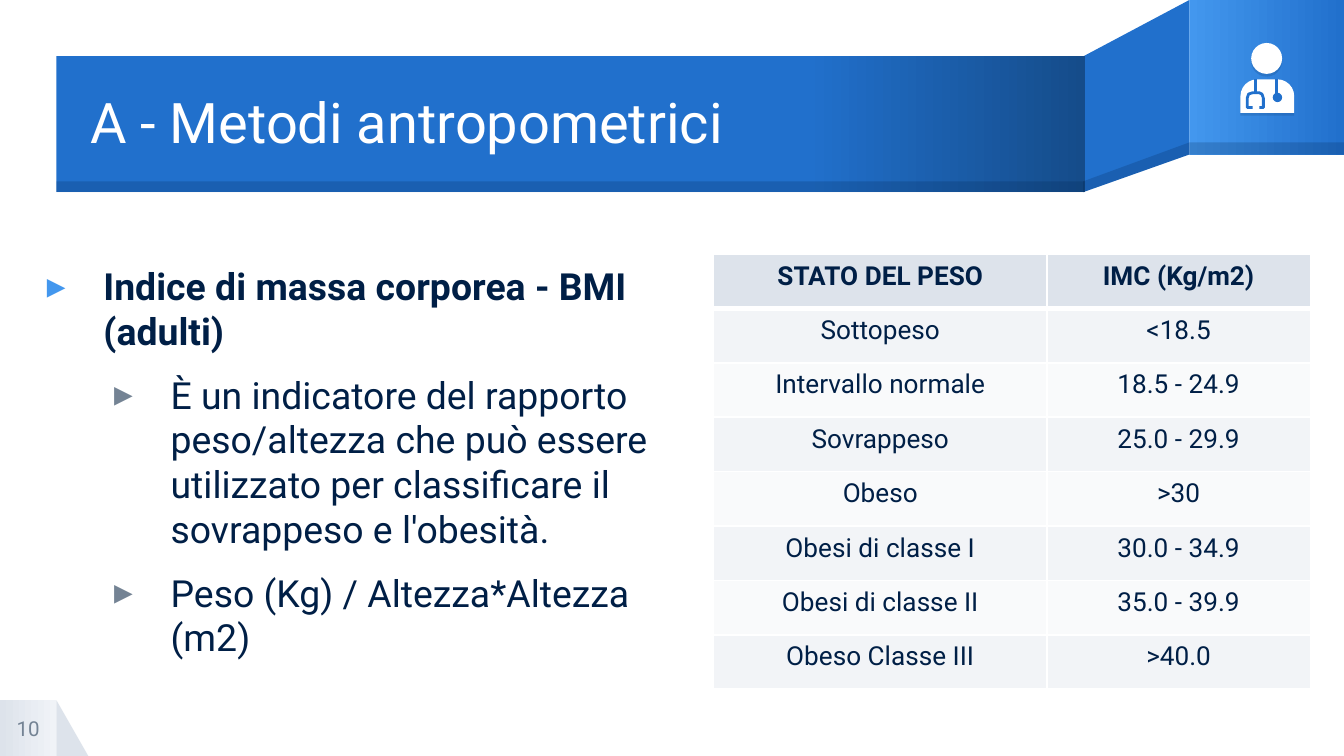
from copy import deepcopy

from lxml import etree
from pptx import Presentation, util as u
from pptx.dml.color import RGBColor
from pptx.enum import shapes as kinds, text as t
from pptx.oxml import ns

Inches, Pt = u.Inches, u.Pt
COLORS = {
    "navy": "001F46", "blue": "2170CC", "sky": "4397EE", "deep": "154C8A",
    "slate": "748394", "mist": "DDE3EB", "pale": "F0F3F7",
    "odd": "F2F4F7", "even": "F9FAFB", "white": "FFFFFF",
}
RGB = {name: RGBColor.from_string(code) for name, code in COLORS.items()}


def sub(parent, tag, **attrs):
    """Append a DrawingML element and return it."""
    return etree.SubElement(parent, ns.qn("a:" + tag), {k: str(v) for k, v in attrs.items()})


def paint(part, stops, alpha=None):
    """Fill a shape with one colour, or a left-to-right gradient of (position, colour)."""
    part.shadow.inherit = False
    part.line.fill.background()
    if isinstance(stops, str):
        part.fill.solid()
        part.fill.fore_color.rgb = RGB[stops]
        if alpha:
            color = part.element.spPr.find(".//" + ns.qn("a:srgbClr"))
            sub(color, "alpha", val=alpha * 1000)
        return
    part.fill.gradient()
    part.fill.gradient_angle = 0
    stop_list = part.element.spPr.find(".//" + ns.qn("a:gsLst"))
    while len(stop_list) < len(stops):
        stop_list.append(deepcopy(stop_list[0]))
    for stop, (position, color) in zip(part.fill.gradient_stops, stops):
        stop.position = position
        stop.color.rgb = RGB[color]


prs = Presentation()
prs.slide_width = Inches(10)
prs.slide_height = prs.slide_width * 9 // 16
slide = prs.slides.add_slide(prs.slide_layouts[6])
shapes = slide.shapes
PRESET = kinds.MSO_SHAPE

# Ribbon and page corner
fold = [(8.85, 0), (8.06, 0.42), (8.06, 1.43), (8.85, 1.15)]
fold_edge = [(8.85, 1.06), (8.06, 1.35), (8.06, 1.43), (8.85, 1.15)]
ribbon = [
    (PRESET.RIGHT_TRIANGLE, (0.42, 5.21, 0.24, 0.42), "mist", None),
    (PRESET.RECTANGLE, (0, 5.21, 0.42, 0.42), [(0, "mist"), (1, "pale")], None),
    (None, fold, "blue", None),
    (PRESET.RECTANGLE, (8.85, 0, 1.15, 1.15), [(0, "sky"), (1, "blue")], None),
    (PRESET.RECTANGLE, (0.42, 0.42, 7.65, 1.01),
     [(0, "blue"), (0.73, "blue"), (1, "deep")], None),
    (None, fold_edge, "navy", 20),
    (PRESET.RECTANGLE, (8.85, 1.06, 1.15, 0.09), "navy", 20),
    (PRESET.RECTANGLE, (0.42, 1.35, 7.65, 0.08), "navy", 20),
]
for preset, geometry, fill, alpha in ribbon:
    if preset is None:
        corners = [(Inches(x), Inches(y)) for x, y in geometry]
        outline = shapes.build_freeform(*corners[0])
        outline.add_line_segments(corners[1:], close=True)
        panel = outline.convert_to_shape()
    else:
        panel = shapes.add_shape(preset, *map(Inches, geometry))
    paint(panel, fill, alpha)

# Doctor: head, shoulders and stethoscope
doctor = [
    (PRESET.ROUND_2_SAME_RECTANGLE, (9.23, 0.59, 0.4, 0.25), "white"),
    (PRESET.OVAL, (9.31, 0.32, 0.23, 0.23), "white"),
    (PRESET.OVAL, (9.47, 0.69, 0.07, 0.07), "blue"),
]
for preset, geometry, fill in doctor:
    part = shapes.add_shape(preset, *map(Inches, geometry))
    paint(part, fill)
    if preset == PRESET.ROUND_2_SAME_RECTANGLE:
        part.adjustments[0] = 0.5
    if fill == "white":
        effects = part.element.spPr.find(ns.qn("a:effectLst"))
        shadow = sub(effects, "outerShdw", dist=Pt(1.5), dir=5400000, algn="bl", rotWithShape=0)
        sub(sub(shadow, "srgbClr", val=COLORS["navy"]), "alpha", val=15000)

tubes = [
    [(9.34, 0.59), (9.34, 0.7)],
    [(9.32, 0.8), (9.28, 0.8), (9.28, 0.73), (9.29, 0.7), (9.32, 0.69),
     (9.37, 0.69), (9.39, 0.7), (9.4, 0.73), (9.4, 0.8), (9.37, 0.8)],
    [(9.5, 0.59), (9.5, 0.7)],
]
for tube in tubes:
    bends = [(Inches(x), Inches(y)) for x, y in tube]
    outline = shapes.build_freeform(*bends[0])
    outline.add_line_segments(bends[1:], close=False)
    hose = outline.convert_to_shape()
    hose.shadow.inherit = False
    hose.fill.background()
    hose.line.color.rgb = RGB["blue"]
    hose.line.width = Pt(1.5)

# Text: (place, anchor, paragraphs of (text, font, colour, layout, bullet colour, indent))
LEFT, CENTER = t.PP_ALIGN.LEFT, t.PP_ALIGN.CENTER
TOP, MIDDLE = t.MSO_ANCHOR.TOP, t.MSO_ANCHOR.MIDDLE
body_font = {"size": Pt(20), "bold": False}
sub_point = {"alignment": LEFT, "space_before": Pt(10), "level": 1}
texts = [
    ((0.67, 0.43, 7.39, 1.01), MIDDLE, [
        ("A - Metodi antropometrici", {"size": Pt(30)}, "white",
         {"alignment": LEFT, "line_spacing": 0.9}, None, 0)]),
    ((0.27, 1.96, 4.96, 3.09), TOP, [
        ("Indice di massa corporea - BMI (adulti)", {"size": Pt(20), "bold": True}, "navy",
         {"alignment": LEFT}, "sky", 0.5),
        ("È un indicatore del rapporto peso/altezza che può essere utilizzato "
         "per classificare il sovrappeso e l'obesità.", body_font, "navy",
         sub_point, "slate", 1),
        ("Peso (Kg) / Altezza*Altezza (m2)", body_font, "navy", sub_point, "slate", 1)]),
    ((0, 5.21, 0.42, 0.42), MIDDLE, [
        ("10", {"size": Pt(11)}, "slate", {"alignment": CENTER}, None, 0)]),
]
for place, anchor, paragraphs in texts:
    frame = shapes.add_textbox(*map(Inches, place)).text_frame
    frame_format = {"word_wrap": True, "vertical_anchor": anchor, "margin_left": 0,
                    "margin_right": 0, "margin_top": 0, "margin_bottom": 0}
    for name, value in frame_format.items():
        setattr(frame, name, value)
    for i, (words, font, color, layout, bullet, indent) in enumerate(paragraphs):
        line = frame.paragraphs[0] if i == 0 else frame.add_paragraph()
        line.text = words
        for name, value in layout.items():
            setattr(line, name, value)
        if bullet:
            props = line._p.get_or_add_pPr()
            props.set("marL", str(Inches(indent)))
            props.set("indent", str(Inches(-0.42)))
            sub(sub(props, "buClr"), "srgbClr", val=COLORS[bullet])
            sub(props, "buFont", typeface="Roboto")
            sub(props, "buChar", char="▸")
        for name, value in {"name": "Roboto", **font}.items():
            setattr(line.runs[0].font, name, value)
        line.runs[0].font.color.rgb = RGB[color]

# Weight classes
classes = [
    ("STATO DEL PESO", "IMC (Kg/m2)"),
    ("Sottopeso", "<18.5"),
    ("Intervallo normale", "18.5 - 24.9"),
    ("Sovrappeso", "25.0 - 29.9"),
    ("Obeso", ">30"),
    ("Obesi di classe I", "30.0 - 34.9"),
    ("Obesi di classe II", "35.0 - 39.9"),
    ("Obeso Classe III", ">40.0"),
]
table = shapes.add_table(len(classes), 2, Inches(5.31), Inches(1.89),
                         Inches(4.44), Inches(3.24)).table
for column, width in zip(table.columns, (2.48, 1.96)):
    column.width = Inches(width)
for r, entries in enumerate(classes):
    for c, entry in enumerate(entries):
        cell = table.cell(r, c)
        cell.text = entry
        line = cell.text_frame.paragraphs[0]
        line.alignment = CENTER
        font = line.runs[0].font
        for name, value in {"name": "Roboto", "size": Pt(14), "bold": r == 0}.items():
            setattr(font, name, value)
        font.color.rgb = RGB["navy"]
        props = cell._tc.get_or_add_tcPr()
        for side in "LRTB":
            thick = (r, side) in ((0, "B"), (1, "T"))
            border = sub(props, "ln" + side, w=Pt(3 if thick else 1))
            sub(sub(border, "solidFill"), "srgbClr", val=COLORS["white"])
        cell.fill.solid()
        cell.fill.fore_color.rgb = RGB["mist" if r == 0 else "odd" if r % 2 else "even"]

prs.save("out.pptx")
